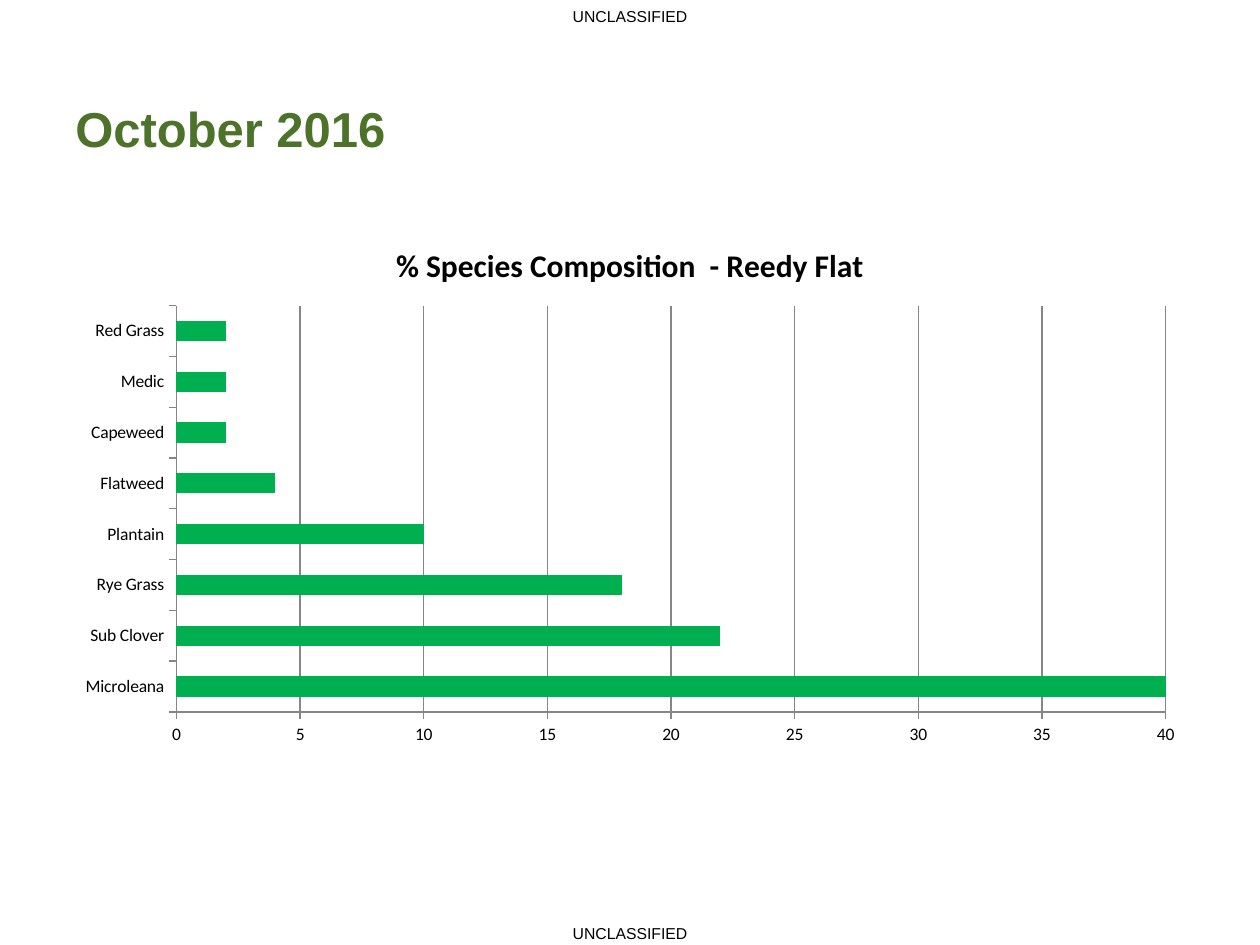
from pptx import Presentation
from pptx.chart.data import CategoryChartData
from pptx.dml.color import RGBColor
from pptx.enum.chart import XL_CHART_TYPE, XL_TICK_MARK
from pptx.enum.text import MSO_ANCHOR, PP_ALIGN
from pptx.util import Inches, Pt

BAR_CLUSTERED = XL_CHART_TYPE.BAR_CLUSTERED
TICK_OUTSIDE, TICK_NONE = XL_TICK_MARK.OUTSIDE, XL_TICK_MARK.NONE
MIDDLE = MSO_ANCHOR.MIDDLE
LEFT, CENTER = PP_ALIGN.LEFT, PP_ALIGN.CENTER

BLACK, OLIVE, GREEN, GRAY = "000000", "4C7329", "00B050", "868686"
MARKING_FONT = {"name": "Arial", "size": Pt(9), "bold": False}
HEADING_FONT = {"name": "Arial", "size": Pt(28), "bold": True}
CHART_FONT = {"name": "Calibri", "size": Pt(10), "bold": False}
CHART_TITLE_FONT = {"name": "Calibri", "size": Pt(18), "bold": True}

SPECIES_SHARES = {
    "Microleana": 40,
    "Sub Clover": 22,
    "Rye Grass": 18,
    "Plantain": 10,
    "Flatweed": 4,
    "Capeweed": 2,
    "Medic": 2,
    "Red Grass": 2,
}


def color(value):
    return RGBColor.from_string(value)


def set_values(target, values):
    for name, value in values.items():
        setattr(target, name, value)


def set_font(font, values, shade):
    set_values(font, values)
    font.color.rgb = color(shade)


def add_text(page, box, text, font_values, shade, alignment):
    frame = page.shapes.add_textbox(*map(Inches, box)).text_frame
    set_values(frame, {"word_wrap": True, "vertical_anchor": MIDDLE})
    para = frame.paragraphs[0]
    para.alignment = alignment
    span = para.add_run()
    span.text = text
    set_font(span.font, font_values, shade)


def add_marking(page, box):
    add_text(page, box, "UNCLASSIFIED", MARKING_FONT, BLACK, CENTER)


def add_heading(page, box):
    add_text(page, box, "October 2016", HEADING_FONT, OLIVE, LEFT)


def add_species_chart(page, box):
    data = CategoryChartData()
    data.categories = list(SPECIES_SHARES)
    data.add_series("Series 1", list(SPECIES_SHARES.values()))
    chart = page.shapes.add_chart(BAR_CLUSTERED, *map(Inches, box), data).chart
    set_values(chart, {"has_legend": False, "has_title": True})
    set_font(chart.font, CHART_FONT, BLACK)

    para = chart.chart_title.text_frame.paragraphs[0]
    span = para.add_run()
    span.text = "% Species Composition  - Reedy Flat"
    set_font(span.font, CHART_TITLE_FONT, BLACK)

    plot = chart.plots[0]
    set_values(plot, {"gap_width": 150, "vary_by_categories": False})
    fill = plot.series[0].format.fill
    fill.solid()
    fill.fore_color.rgb = color(GREEN)

    value_axis, category_axis = chart.value_axis, chart.category_axis
    set_values(value_axis, {
        "minimum_scale": 0,
        "maximum_scale": 40,
        "major_unit": 5,
        "has_major_gridlines": True,
    })
    for axis in (value_axis, category_axis):
        set_values(axis, {"major_tick_mark": TICK_OUTSIDE, "minor_tick_mark": TICK_NONE})
    for part in (value_axis, category_axis, value_axis.major_gridlines):
        part.format.line.color.rgb = color(GRAY)
        part.format.line.width = Pt(0.75)


def main():
    deck = Presentation()
    set_values(deck, {"slide_width": Inches(10), "slide_height": Inches(7.5)})
    page = deck.slides.add_slide(deck.slide_layouts[6])
    for top in (0, 7.28):
        add_marking(page, (0, top, 10, 0.25))
    add_heading(page, (0.5, 0.48, 9, 1.07))
    add_species_chart(page, (0.5, 1.75, 9, 4.24))
    deck.save("out.pptx")


if __name__ == "__main__":
    main()
